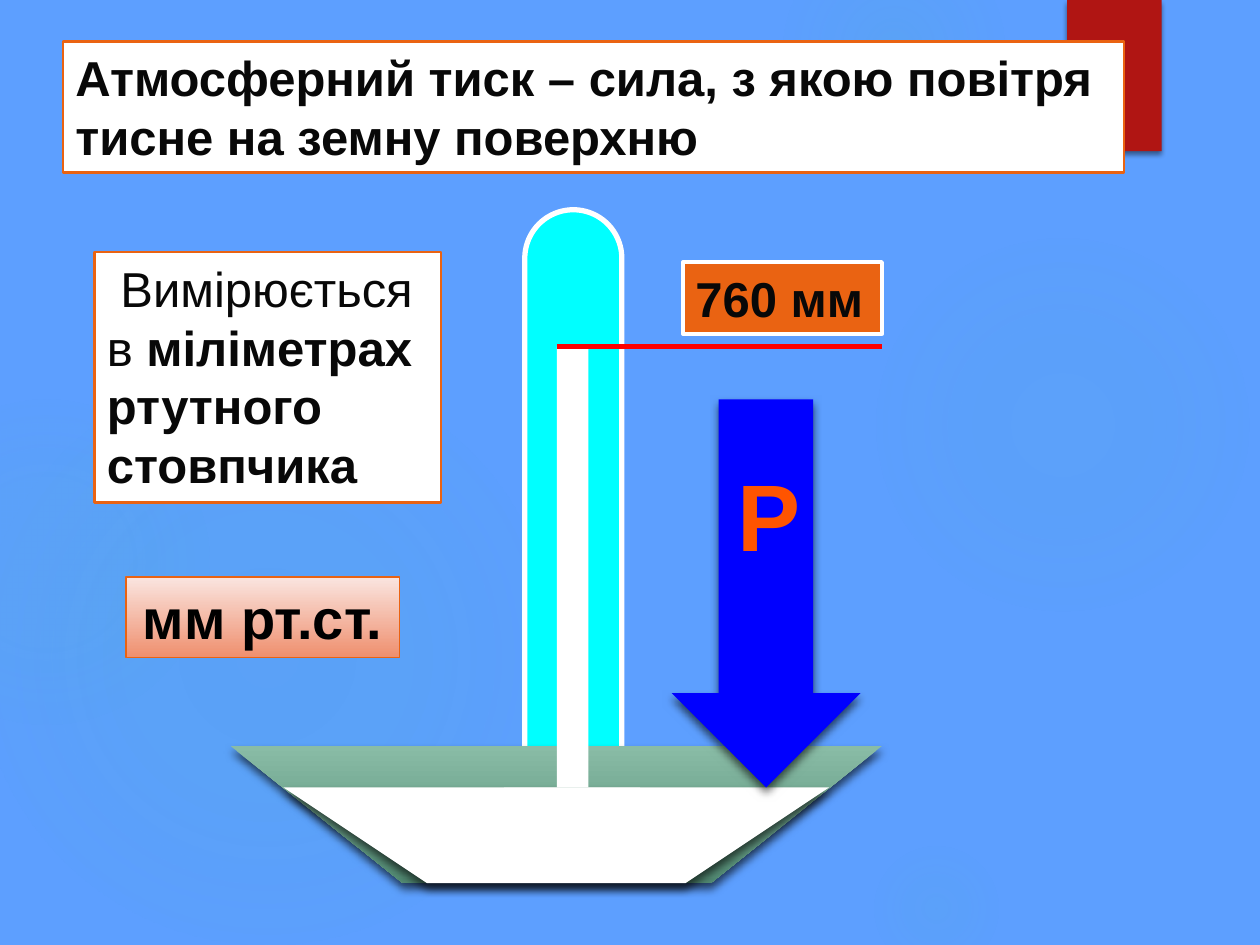
"""Build a slide showing how a mercury column measures atmospheric pressure."""
from lxml import etree
from pptx import Presentation
from pptx.dml.color import RGBColor
from pptx.enum.shapes import MSO_CONNECTOR, MSO_SHAPE
from pptx.enum.text import MSO_ANCHOR, PP_ALIGN
from pptx.oxml.ns import qn
from pptx.util import Inches, Pt

RECTANGLE, ELLIPSE = MSO_SHAPE.RECTANGLE, MSO_SHAPE.OVAL
ROUNDED, DOWN_ARROW = MSO_SHAPE.ROUNDED_RECTANGLE, MSO_SHAPE.DOWN_ARROW
LEFT, CENTER = PP_ALIGN.LEFT, PP_ALIGN.CENTER

WIDTH, HEIGHT = 10, 7.5
BACKGROUND, GLOW = "5D9FFF", "4CB9C3"
WHITE, ORANGE, INK = "FFFFFF", "EA6312", "080808"
MERCURY_TOP, MERCURY_SURFACE, DISH_TOP, DISH_BOTTOM = 2.75, 6.25, 5.92, 7.01
COLUMN_LEFT, SCALE_RIGHT = 4.42, 7
SOFT_SHADOW, DEEP_SHADOW = (45, 3, 2), (60, 5, 3)

# left, top, diameter, opacity at the centre, opacity at 36 %, fade-out position
GLOWS = [
    (6.89, 1.83, 3.08, 7, 6, 69),
    (6.22, -0.5, 1.75, 14, 7, 73),
    (6.89, 6.67, 1.08, 9, 5, 66),
    (-0.17, 2.92, 4.58, 11, 10, 75),
    (-0.92, 3.17, 2.58, 8, 8, 72),
]
DISHES = [
    ([(1.83, DISH_TOP), (3.2, DISH_BOTTOM), (5.64, DISH_BOTTOM), (7, DISH_TOP)],
     [(0, "89BCA6", 100), (100, "528A73", 100)]),
    ([(2.25, MERCURY_SURFACE), (3.39, DISH_BOTTOM), (5.44, DISH_BOTTOM), (6.58, MERCURY_SURFACE)],
     WHITE),
]
TITLE = [("Атмосферний тиск – сила, з якою повітря тисне на земну поверхню", True)]
UNIT = [(" Вимірюється ", False), None, ("в ", False), ("міліметрах ртутного стовпчика", True)]
LABELS = [
    dict(box=(0.5, 0.33, 8.42, 1.04), fill=WHITE, line=(ORANGE, 1.5),
         runs=TITLE, size=28, color=INK, align=LEFT),
    dict(box=(5.42, 2.08, 1.58, 0.57), fill=ORANGE, line=(WHITE, 2.25),
         runs=[("760 мм", True)], size=28, color=INK, align=LEFT),
    dict(box=(0.75, 2, 2.75, 1.99), fill=WHITE, line=(ORANGE, 1.5),
         runs=UNIT, size=28, color=INK, align=LEFT),
    dict(box=(1, 4.58, 2.17, 0.64), fill=[(0, "FAE5E0", 100), (100, "EF8F6E", 100)],
         line=(ORANGE, 0.75), runs=[("мм рт.ст.", True)], size=32, color="000000", align=CENTER),
    dict(box=(5.75, 3.58, 0.71, 1.01), fill=None, line=None,
         runs=[("Р", True)], size=54, color="FF5400", align=CENTER),
]


def rgb(value):
    return RGBColor.from_string(value)


def add_element(parent, tag, **attributes):
    values = {key: str(value) for key, value in attributes.items()}
    return etree.SubElement(parent, qn(tag), values)


def add_color(parent, color, opacity):
    element = add_element(parent, "a:srgbClr", val=color)
    add_element(element, "a:alpha", val=opacity * 1000)


def set_gradient(shape, stops, radial):
    shape.fill.background()
    properties = shape.fill._xPr
    gradient = etree.Element(qn("a:gradFill"), rotWithShape="1")
    properties.replace(properties.find(qn("a:noFill")), gradient)
    stop_list = add_element(gradient, "a:gsLst")
    for position, color, opacity in stops:
        add_color(add_element(stop_list, "a:gs", pos=position * 1000), color, opacity)
    if radial:
        circle = add_element(gradient, "a:path", path="circle")
        add_element(circle, "a:fillToRect", l=50000, t=50000, r=50000, b=50000)
    else:
        add_element(gradient, "a:lin", ang=5400000, scaled=0)


def style(shape, fill, line=None, shadow=None, radial=False):
    shape.shadow.inherit = False
    if fill is None:
        shape.fill.background()
    elif isinstance(fill, str):
        shape.fill.solid()
        shape.fill.fore_color.rgb = rgb(fill)
    else:
        set_gradient(shape, fill, radial)
    if line:
        shape.line.color.rgb = rgb(line[0])
        shape.line.width = Pt(line[1])
    else:
        shape.line.fill.background()
    if shadow:
        opacity, blur, distance = shadow
        effects = shape._element.spPr.find(qn("a:effectLst"))
        outer = add_element(effects, "a:outerShdw", blurRad=Pt(blur), dist=Pt(distance),
                            dir=5400000, rotWithShape=0)
        add_color(outer, "000000", opacity)


def add_shape(slide, kind, box, fill, **look):
    shape = slide.shapes.add_shape(kind, *map(Inches, box))
    style(shape, fill, **look)
    return shape


def add_dish(slide, points, fill):
    corners = [(Inches(x), Inches(y)) for x, y in points]
    builder = slide.shapes.build_freeform(*corners[0])
    builder.add_line_segments(corners[1:], close=True)
    style(builder.convert_to_shape(), fill, shadow=DEEP_SHADOW)


def add_label(slide, box, fill, line, runs, size, color, align):
    if fill is None:
        shape = slide.shapes.add_textbox(*map(Inches, box))
    else:
        shape = add_shape(slide, RECTANGLE, box, fill, line=line)
    frame = shape.text_frame
    frame.word_wrap = True
    frame.vertical_anchor = MSO_ANCHOR.TOP
    paragraph = frame.paragraphs[0]
    paragraph.alignment = align
    for part in runs:
        if part is None:
            paragraph.add_line_break()
            continue
        run = paragraph.add_run()
        run.text, bold = part
        for name, value in dict(name="Arial", size=Pt(size), bold=bold).items():
            setattr(run.font, name, value)
        run.font.color.rgb = rgb(color)


def main():
    presentation = Presentation()
    presentation.slide_width, presentation.slide_height = Inches(WIDTH), Inches(HEIGHT)
    slide = presentation.slides.add_slide(presentation.slide_layouts[6])
    slide.background.fill.solid()
    slide.background.fill.fore_color.rgb = rgb(BACKGROUND)

    for left, top, diameter, centre, middle, fade in GLOWS:
        stops = [(0, GLOW, centre), (36, GLOW, middle), (fade, GLOW, 0), (100, GLOW, 0)]
        add_shape(slide, ELLIPSE, (left, top, diameter, diameter), stops, radial=True)
    add_shape(slide, RECTANGLE, (8.47, 0, 0.75, 1.2), "B01513", shadow=SOFT_SHADOW)

    tube = add_shape(slide, ROUNDED, (2.15, 3.68, 4.8, 0.77), "00FFFF", line=(WHITE, 3))
    tube.adjustments[0] = 0.5
    tube.rotation = 90
    for points, fill in DISHES:
        add_dish(slide, points, fill)
    column = (COLUMN_LEFT, MERCURY_TOP, 0.25, MERCURY_SURFACE - MERCURY_TOP)
    add_shape(slide, RECTANGLE, column, WHITE)
    add_shape(slide, DOWN_ARROW, (5.33, 3.17, 1.5, 3.08), "0000FF", shadow=DEEP_SHADOW)

    title, *other_labels = LABELS
    add_label(slide, **title)
    ends = (COLUMN_LEFT, MERCURY_TOP, SCALE_RIGHT, MERCURY_TOP)
    level = slide.shapes.add_connector(MSO_CONNECTOR.STRAIGHT, *map(Inches, ends))
    level.line.color.rgb = rgb("FF0000")
    level.line.width = Pt(3)
    add_element(level._element.spPr, "a:effectLst")
    for label in other_labels:
        add_label(slide, **label)
    add_shape(slide, RECTANGLE, (4, MERCURY_SURFACE, 1.08, 0.71), WHITE)
    presentation.save("out.pptx")


if __name__ == "__main__":
    main()
